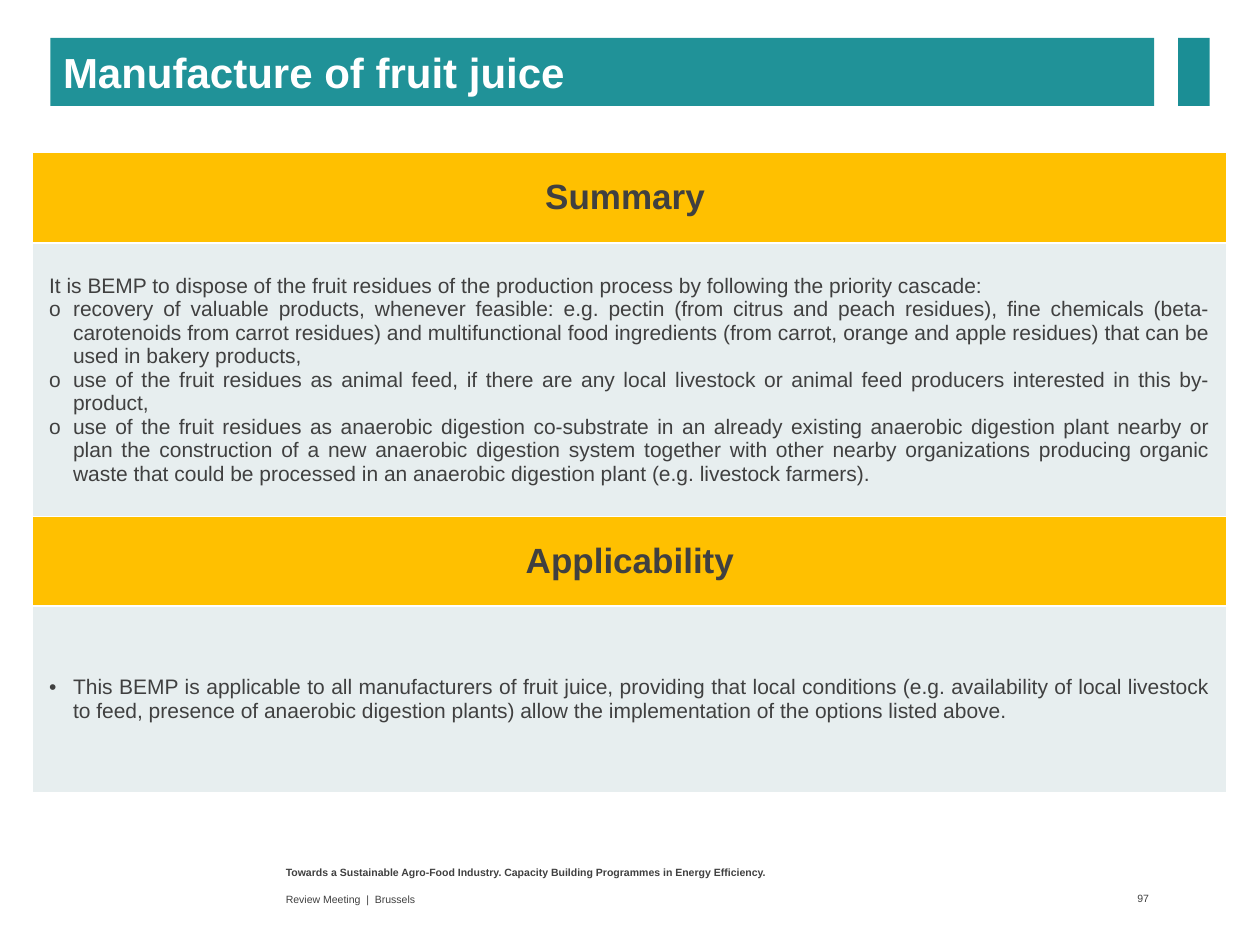
from pptx import Presentation
from pptx.dml.color import RGBColor
from pptx.enum.shapes import MSO_SHAPE
from pptx.enum.text import MSO_ANCHOR, MSO_AUTO_SIZE, PP_ALIGN
from pptx.oxml import parse_xml
from pptx.oxml.ns import nsdecls
from pptx.util import Inches, Pt

LEFT, CENTER, RIGHT, JUSTIFY = PP_ALIGN.LEFT, PP_ALIGN.CENTER, PP_ALIGN.RIGHT, PP_ALIGN.JUSTIFY
TOP, MIDDLE = MSO_ANCHOR.TOP, MSO_ANCHOR.MIDDLE
TITLE_ONLY = 5

THEME = {
    "font": "Arial",
    "text": RGBColor.from_string("404040"),
    "white": RGBColor.from_string("FFFFFF"),
    "banner": RGBColor.from_string("209298"),
    "accent": RGBColor.from_string("1B8E95"),
    "heading_fill": RGBColor.from_string("FFC000"),
    "body_fill": RGBColor.from_string("E7EEEF"),
    "title_size": Pt(24),
    "heading_size": Pt(20),
    "body_size": Pt(12),
    "footer_size": Pt(6),
}
HANGING = Inches(0.19)

# Each section: top, row heights, heading, space after, (bullet, text) paragraphs
SECTIONS = [
    (1.21, (0.72, 2.17), "Summary ", 0, [
        (None, "It is BEMP to dispose of the fruit residues of the production process by "
               "following the priority cascade:"),
        ("o", "recovery of valuable products, whenever feasible: e.g. pectin (from citrus and "
              "peach residues), fine chemicals (beta-carotenoids from carrot residues) and "
              "multifunctional food ingredients (from carrot, orange and apple residues) that "
              "can be used in bakery products,"),
        ("o", "use of the fruit residues as animal feed, if there are any local livestock or "
              "animal feed producers interested in this by-product,"),
        ("o", "use of the fruit residues as anaerobic digestion co-substrate in an already "
              "existing anaerobic digestion plant nearby or plan the construction of a new "
              "anaerobic digestion system together with other nearby organizations producing "
              "organic waste that could be processed in an anaerobic digestion plant "
              "(e.g. livestock farmers). "),
    ]),
    (4.10, (0.71, 1.48), "Applicability", 6, [
        ("•", "This BEMP is applicable to all manufacturers of fruit juice, providing that local "
              "conditions (e.g. availability of local livestock to feed, presence of anaerobic "
              "digestion plants) allow the implementation of the options listed above."),
    ]),
]

# Each footer: left, top, width, height, anchor, alignment, bold, right inset, text
FOOTERS = [
    (2.17, 6.82, 5.5, 0.21, TOP, LEFT, True, 0.1,
     "Towards a Sustainable Agro-Food Industry. Capacity Building Programmes in Energy Efficiency."),
    (2.17, 7.04, 5.5, 0.19, MIDDLE, LEFT, False, 0.1, "Review Meeting  |  Brussels"),
    (8.6, 7.03, 0.56, 0.2, MIDDLE, RIGHT, False, 0.04, "97"),
]


def write(paragraph, text, size, color="text", bold=False, align=LEFT, bullet=None):
    """Fill one paragraph, with a hanging bullet if one is given."""
    if bullet:
        properties = paragraph._p.get_or_add_pPr()
        properties.set("marL", str(HANGING))
        properties.set("indent", str(-HANGING))
        properties.append(parse_xml(f'<a:buFont {nsdecls("a")} typeface="{THEME["font"]}"/>'))
        properties.append(parse_xml(f'<a:buChar {nsdecls("a")} char="{bullet}"/>'))
    paragraph.alignment = align
    run = paragraph.add_run()
    run.text = text
    font_format = {"name": THEME["font"], "size": THEME[size], "bold": bold}
    for attribute, value in font_format.items():
        setattr(run.font, attribute, value)
    run.font.color.rgb = THEME[color]


def format_cell(cell, fill, inset_x, inset_y):
    """Set fill, insets and thin white borders."""
    cell_format = {
        "vertical_anchor": MIDDLE,
        "margin_left": Inches(inset_x), "margin_right": Inches(inset_x),
        "margin_top": Inches(inset_y), "margin_bottom": Inches(inset_y),
    }
    for attribute, value in cell_format.items():
        setattr(cell, attribute, value)
    properties = cell._tc.get_or_add_tcPr()
    for side in ("lnL", "lnR", "lnT", "lnB"):
        properties.append(parse_xml(
            f'<a:{side} {nsdecls("a")} w="{Pt(1)}"><a:solidFill>'
            f'<a:srgbClr val="{THEME["white"]}"/></a:solidFill></a:{side}>'))
    cell.fill.solid()
    cell.fill.fore_color.rgb = THEME[fill]


prs = Presentation()
prs.slide_width, prs.slide_height = Inches(10), Inches(7.5)
slide = prs.slides.add_slide(prs.slide_layouts[TITLE_ONLY])

# Footer
for left, top, width, height, anchor, align, bold, inset_right, text in FOOTERS:
    footer = slide.shapes.add_textbox(Inches(left), Inches(top), Inches(width), Inches(height))
    frame_format = {"word_wrap": True, "vertical_anchor": anchor,
                    "margin_right": Inches(inset_right)}
    for attribute, value in frame_format.items():
        setattr(footer.text_frame, attribute, value)
    write(footer.text_frame.paragraphs[0], text, "footer_size", bold=bold, align=align)

# Summary and applicability tables
for top, row_heights, heading, space_after, paragraphs in SECTIONS:
    section = slide.shapes.add_table(
        2, 1, Inches(0.26), Inches(top), Inches(9.48), Inches(sum(row_heights))).table
    for row, height in zip(section.rows, row_heights):
        row.height = Inches(height)
    heading_cell, body_cell = section.cell(0, 0), section.cell(1, 0)
    format_cell(heading_cell, "heading_fill", 0.1, 0.05)
    format_cell(body_cell, "body_fill", 0.13, 0.06)
    write(heading_cell.text_frame.paragraphs[0], heading, "heading_size", bold=True, align=CENTER)
    body = body_cell.text_frame
    for index, (bullet, text) in enumerate(paragraphs):
        paragraph = body.add_paragraph() if index else body.paragraphs[0]
        write(paragraph, text, "body_size", align=JUSTIFY, bullet=bullet)
        paragraph.space_after = Pt(space_after)

# Title banner and its accent block
title = slide.shapes.title
accent = slide.shapes.add_shape(
    MSO_SHAPE.RECTANGLE, Inches(9.35), Inches(0.3), Inches(0.25), Inches(0.54))
accent.shadow.inherit = False
accent.line.fill.background()
banner_format = {"left": Inches(0.4), "top": Inches(0.3),
                 "width": Inches(8.76), "height": Inches(0.54)}
for attribute, value in banner_format.items():
    setattr(title, attribute, value)
for block, color in ((title, "banner"), (accent, "accent")):
    block.fill.solid()
    block.fill.fore_color.rgb = THEME[color]
title_format = {"word_wrap": True, "auto_size": MSO_AUTO_SIZE.NONE, "vertical_anchor": MIDDLE}
for attribute, value in title_format.items():
    setattr(title.text_frame, attribute, value)
write(title.text_frame.paragraphs[0], "Manufacture of fruit juice", "title_size", "white", bold=True)

prs.save("out.pptx")
